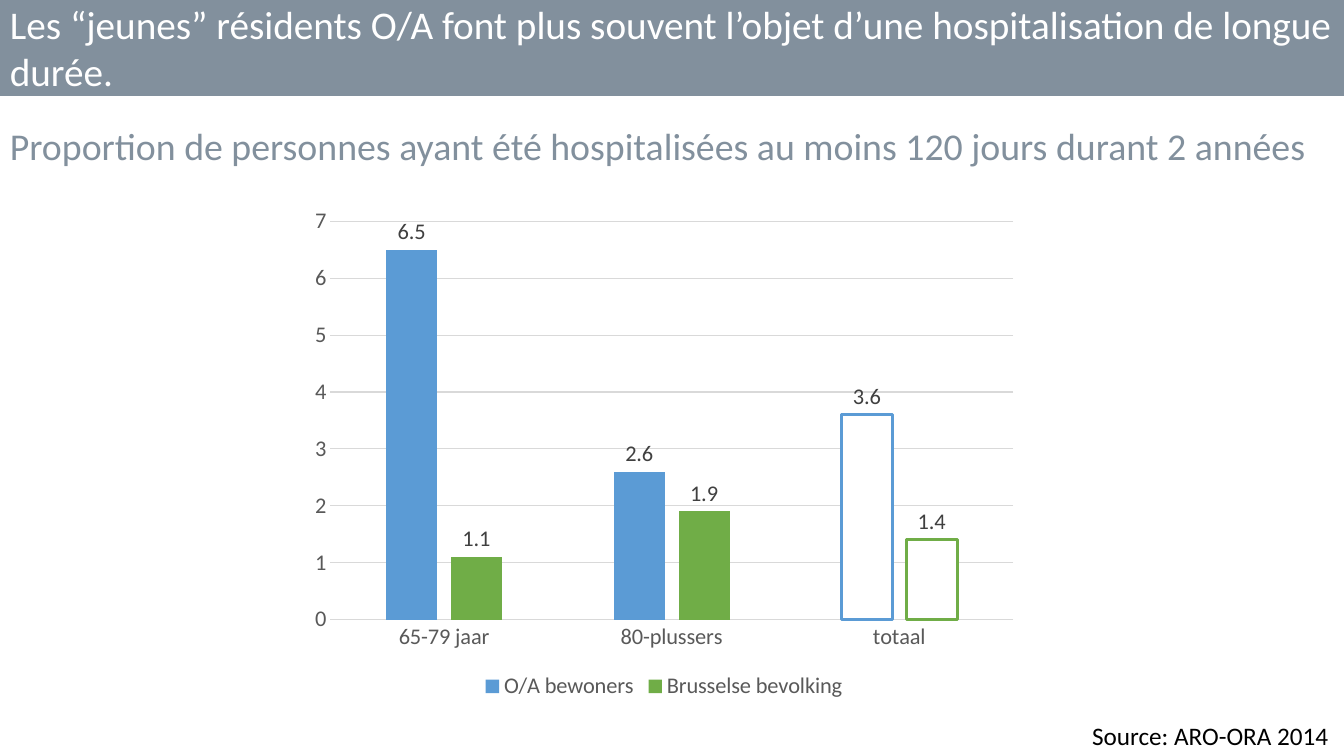
from pptx import Presentation
from pptx import util as u
from pptx.chart import data
from pptx.dml.color import RGBColor
from pptx.enum import chart as ch, shapes, text

SLATE = RGBColor(0x82, 0x90, 0x9D)
WHITE = RGBColor(0xFF, 0xFF, 0xFF)
BLACK = RGBColor(0, 0, 0)
AXIS_GREY = RGBColor(0x59, 0x59, 0x59)
LABEL_GREY = RGBColor(0x40, 0x40, 0x40)
GRID_GREY = RGBColor(0xD9, 0xD9, 0xD9)
BLUE = RGBColor(0x5B, 0x9B, 0xD5)
GREEN = RGBColor(0x70, 0xAD, 0x47)
FONT = "Calibri"
WIDTH, HEIGHT = u.Inches(13.33), u.Inches(7.5)

AGE_GROUPS = ["65-79 jaar", "80-plussers", "totaal"]
POPULATIONS = {
    "O/A bewoners": ([6.5, 2.6, 3.6], BLUE),
    "Brusselse bevolking": ([1.1, 1.9, 1.4], GREEN),
}


def share(left, top, width, height):
    """Turn shares of the slide's size into a box in EMU."""
    return (round(left * WIDTH), round(top * HEIGHT),
            round(width * WIDTH), round(height * HEIGHT))


def apply(target, values):
    """Set each named attribute on the target."""
    for name, value in values.items():
        setattr(target, name, value)


def style_font(font, size, color):
    """Give a font its face, size and colour."""
    apply(font, {"name": FONT, "size": u.Pt(size)})
    font.color.rgb = color


def style_line(line, color, width):
    """Give a line its colour and width in points."""
    line.color.rgb = color
    line.width = u.Pt(width)


def add_caption(slide, box, wording, size, color, align=text.PP_ALIGN.LEFT):
    """Place one wrapped paragraph in the box."""
    frame = slide.shapes.add_textbox(*box).text_frame
    apply(frame, {"word_wrap": True,
                  "auto_size": text.MSO_AUTO_SIZE.SHAPE_TO_FIT_TEXT})
    paragraph = frame.paragraphs[0]
    paragraph.alignment = align
    run = paragraph.add_run()
    run.text = wording
    style_font(run.font, size, color)


def add_heading(slide, box, wording):
    """Fill the box with a slate band and lay the title over it."""
    left, top, width, height = box
    band = slide.shapes.add_shape(shapes.MSO_SHAPE.RECTANGLE, *box)
    band.shadow.inherit = False
    band.fill.solid()
    band.fill.fore_color.rgb = SLATE
    band.line.fill.background()
    overhang = u.Inches(0.05)
    title_box = left, top - overhang, width, height + 2 * overhang
    add_caption(slide, title_box, wording, 28, WHITE)


def style_axes(chart):
    """Set the scale, labels and lines of both axes."""
    ages, percent = chart.category_axis, chart.value_axis
    for axis in (ages, percent):
        apply(axis, {"major_tick_mark": ch.XL_TICK_MARK.NONE,
                     "minor_tick_mark": ch.XL_TICK_MARK.NONE})
        style_font(axis.tick_labels.font, 16, AXIS_GREY)
    apply(percent, {"minimum_scale": 0, "maximum_scale": 7, "major_unit": 1,
                    "has_major_gridlines": True})
    style_line(ages.format.line, GRID_GREY, 0.75)
    style_line(percent.major_gridlines.format.line, GRID_GREY, 0.75)
    percent.format.line.fill.background()


def style_series(series, color):
    """Colour one population's bars, outline its total and label values."""
    series.format.fill.solid()
    series.format.fill.fore_color.rgb = color
    series.invert_if_negative = False
    total = series.points[len(AGE_GROUPS) - 1].format
    total.fill.solid()
    total.fill.fore_color.rgb = WHITE
    style_line(total.line, color, 2.25)
    labels = series.data_labels
    apply(labels, {"show_value": True,
                   "position": ch.XL_LABEL_POSITION.OUTSIDE_END})
    style_font(labels.font, 16, LABEL_GREY)


def add_hospital_chart(slide, box):
    """Place the clustered columns of long hospital stays in the box."""
    stays = data.CategoryChartData()
    stays.categories = AGE_GROUPS
    for name, (values, _) in POPULATIONS.items():
        stays.add_series(name, values)
    chart = slide.shapes.add_chart(
        ch.XL_CHART_TYPE.COLUMN_CLUSTERED, *box, stays).chart
    apply(chart, {"has_title": False, "has_legend": True})
    style_font(chart.font, 10, BLACK)
    apply(chart.legend, {"position": ch.XL_LEGEND_POSITION.BOTTOM,
                         "include_in_layout": False})
    style_font(chart.legend.font, 16, AXIS_GREY)
    plot = chart.plots[0]
    apply(plot, {"gap_width": 219, "overlap": -27, "vary_by_categories": False})
    style_axes(chart)
    for series in plot.series:
        style_series(series, POPULATIONS[series.name][1])


def build_slide(deck):
    """Lay out the heading, subtitle, chart and source on a blank slide."""
    slide = deck.slides.add_slide(deck.slide_layouts[6])
    add_heading(slide, share(0, 0, 1, 0.127),
                "Les “jeunes” résidents O/A font plus souvent l’objet d’une "
                "hospitalisation de longue durée.")
    add_caption(slide, share(0, 0.156, 1, 0.075),
                "Proportion de personnes ayant été hospitalisées au moins "
                "120 jours durant 2 années", 27, SLATE)
    add_hospital_chart(slide, share(0.2236, 0.2613, 0.541, 0.6707))
    add_caption(slide, share(0.46, 0.9467, 0.54, 0.0533),
                "Source: ARO-ORA 2014 ", 18, BLACK, text.PP_ALIGN.RIGHT)


def main():
    """Create the deck and save it."""
    deck = Presentation()
    apply(deck, {"slide_width": WIDTH, "slide_height": HEIGHT})
    build_slide(deck)
    deck.save("out.pptx")


if __name__ == "__main__":
    main()
